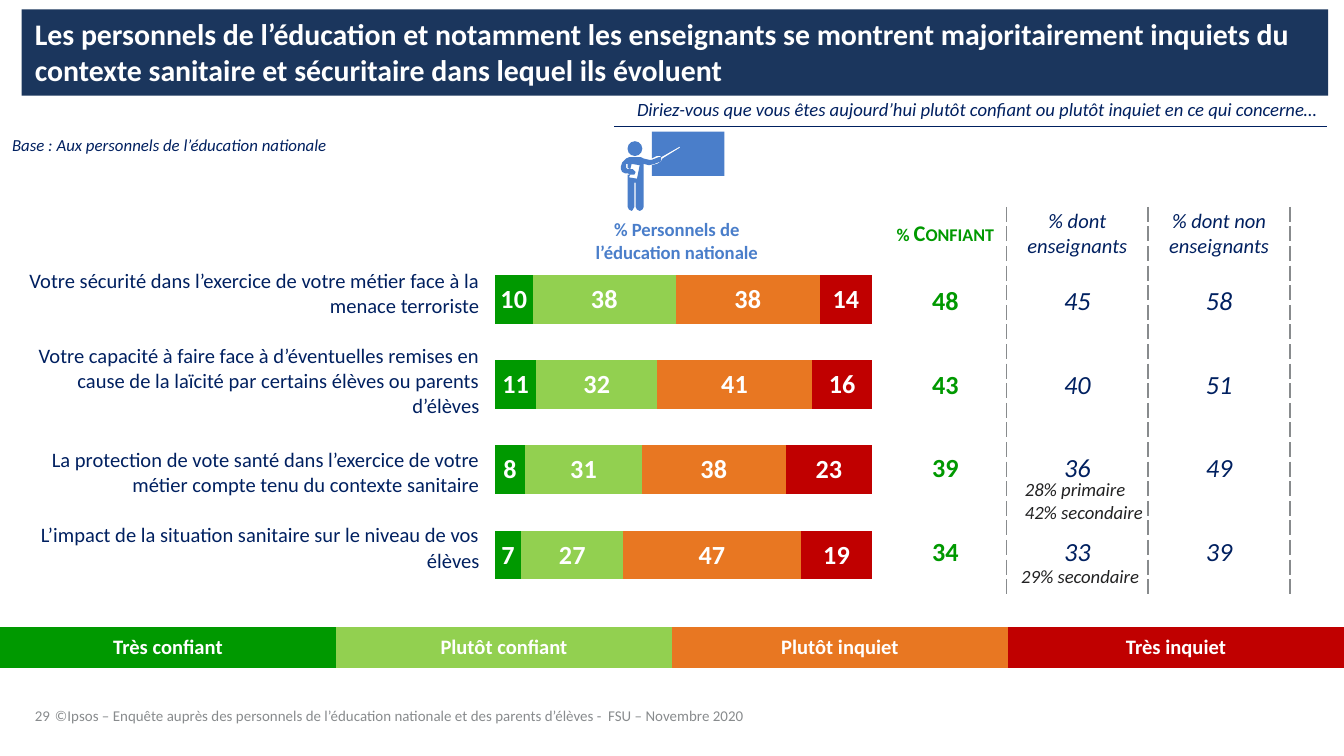
from dataclasses import dataclass

import lxml.etree
import pptx
import pptx.chart.data
import pptx.dml.color
import pptx.enum.chart
import pptx.enum.shapes
import pptx.enum.text
import pptx.oxml
import pptx.oxml.ns
import pptx.util

Cm = pptx.util.Cm
Align = pptx.enum.text.PP_ALIGN
Anchor = pptx.enum.text.MSO_ANCHOR
qn = pptx.oxml.ns.qn

FONT = "Calibri"
NAVY, WHITE, GREY, BLACK = "002060", "FFFFFF", "888B8D", "222223"
GREEN, BLUE, TITLE_FILL = "009900", "4A7ECA", "1B365D"
PLAIN_TABLE = "{2D5ABB26-0587-4C30-8999-92F81FD0307C}"
NO_INSETS = (0, 0, 0, 0)
BOX_INSETS = (0.25, 0.13, 0.25, 0.13)


@dataclass
class Answer:
    name: str
    color: str
    values: tuple[int, ...]


@dataclass
class Topic:
    label: str
    height: float
    teachers: int
    others: int


@dataclass
class Note:
    left: float
    top: float
    width: float
    height: float
    text: str
    size: float
    color: str
    italic: bool = False
    bold: bool = False
    align: Align = Align.LEFT
    anchor: Anchor = Anchor.TOP
    insets: tuple = BOX_INSETS


ANSWERS = [
    Answer("Très confiant", GREEN, (10, 11, 8, 7)),
    Answer("Plutôt confiant", "92D050", (38, 32, 31, 27)),
    Answer("Plutôt inquiet", "E87722", (38, 41, 38, 47)),
    Answer("Très inquiet", "C00000", (14, 16, 23, 19)),
]
TOPICS = [
    Topic("Votre sécurité dans l’exercice de votre métier face à la menace terroriste", 1.19, 45, 58),
    Topic("Votre capacité à faire face à d’éventuelles remises en cause de la laïcité "
          "par certains élèves ou parents d’élèves", 2.11, 40, 51),
    Topic("La protection de vote santé dans l’exercice de votre métier compte tenu "
          "du contexte sanitaire", 1.35, 36, 49),
    Topic("L’impact de la situation sanitaire sur le niveau de vos élèves", 1.5, 33, 39),
]
NOTES = [
    Note(0.66, 13.03, 0.86, 0.66, "29", 8, GREY, anchor=Anchor.BOTTOM, insets=NO_INSETS),
    Note(0.79, 13.23, 18.77, 0.51, "©Ipsos – Enquête auprès des personnels de l’éducation nationale "
         "et des parents d’élèves -  FSU – Novembre 2020", 8, GREY),
    Note(11.79, 1.45, 13.46, 1.24, "Diriez-vous que vous êtes aujourd’hui plutôt confiant ou plutôt "
         "inquiet en ce qui concerne…", 10, NAVY, italic=True, anchor=Anchor.MIDDLE),
    Note(0.23, 2.54, 6.07, 0.38, "Base : Aux personnels de l’éducation nationale", 9, NAVY,
         italic=True, insets=NO_INSETS),
    Note(10.87, 3.99, 3.84, 1.12, "% Personnels de l’éducation nationale", 10, BLUE,
         bold=True, align=Align.CENTER),
    Note(19.37, 9.04, 2.41, 0.86, "28% primaire\n42% secondaire", 10, BLACK, italic=True, insets=NO_INSETS),
    Note(19.3, 10.67, 2.41, 0.43, "29% secondaire", 10, BLACK, italic=True, insets=NO_INSETS),
]
BOARD = [(491, 116), (492, 117), (506, 109), (506.3, 109.5), (493, 117.6), (492, 120), (489, 122),
         (485, 123), (485, 131), (539, 131), (539, 98), (485, 98), (485, 118), (489, 116)]
BODY = [(465, 129), (467, 129), (469, 130), (472, 130), (473, 128), (471, 126), (467, 126),
        (466, 125), (466, 122), (467, 122), (467, 125), (469, 126), (470, 122), (476, 123),
        (474, 133), (468, 132), (469, 130), (467, 130), (467, 154), (468, 156), (469.5, 157),
        (471, 156), (472, 154), (472, 136), (473, 136), (473, 154), (474, 156), (476, 157),
        (478, 156), (479, 154), (479, 122), (483, 123), (487, 122), (492, 120), (492.5, 118),
        (492, 117), (490, 117), (485, 119), (483, 119), (479, 118), (477, 117), (468, 117),
        (466, 118), (463, 121), (462, 124), (462, 126), (463, 128)]


def rgb(color: str) -> pptx.dml.color.RGBColor:
    return pptx.dml.color.RGBColor.from_string(color)


def style_font(font, *, size: float, color: str, bold: bool = False, italic: bool = False) -> None:
    font.name, font.size = FONT, pptx.util.Pt(size)
    font.bold, font.italic = bold, italic
    font.color.rgb = rgb(color)


def write(frame, text: str, *, align: Align = Align.LEFT, small_caps: bool = False, **font_format) -> None:
    for index, line in enumerate(text.split("\n")):
        para = frame.add_paragraph() if index else frame.paragraphs[0]
        para.alignment = align
        span = para.add_run()
        span.text = line
        style_font(span.font, **font_format)
        if small_caps:
            span.font._element.set("cap", "small")


def set_insets(target, insets: tuple) -> None:
    target.margin_left, target.margin_top, target.margin_right, target.margin_bottom = map(Cm, insets)


def paint(shape, color: str) -> None:
    shape.shadow.inherit = False
    shape.fill.solid()
    shape.fill.fore_color.rgb = rgb(color)
    shape.line.fill.background()


def add_note(page, note: Note) -> None:
    box = page.shapes.add_textbox(Cm(note.left), Cm(note.top), Cm(note.width), Cm(note.height))
    frame = box.text_frame
    frame.word_wrap = True
    frame.vertical_anchor = note.anchor
    set_insets(frame, note.insets)
    write(frame, note.text, size=note.size, color=note.color, bold=note.bold,
          italic=note.italic, align=note.align)


def add_grid(page, left: float, top: float, widths: list[float], heights: list[float]):
    table = page.shapes.add_table(len(heights), len(widths), Cm(left), Cm(top),
                                  Cm(sum(widths)), Cm(sum(heights))).table
    table.first_row = table.horz_banding = False
    table._tbl.tblPr.find(qn("a:tableStyleId")).text = PLAIN_TABLE
    for column, width in zip(table.columns, widths):
        column.width = Cm(width)
    for row, height in zip(table.rows, heights):
        row.height = Cm(height)
    return table


def fill_cell(cell, text: str, *, fill: str, insets: tuple = BOX_INSETS, **text_format) -> None:
    cell.fill.solid()
    cell.fill.fore_color.rgb = rgb(fill)
    cell.vertical_anchor = Anchor.MIDDLE
    set_insets(cell, insets)
    write(cell.text_frame, text, **text_format)


def dash_right_side(cell) -> None:
    border = lxml.etree.Element(qn("a:lnR"), w="12700")
    fill = lxml.etree.SubElement(border, qn("a:solidFill"))
    lxml.etree.SubElement(fill, qn("a:srgbClr"), val=GREY)
    lxml.etree.SubElement(border, qn("a:prstDash"), val="sysDash")
    cell._tc.get_or_add_tcPr().insert(0, border)


def add_answer_chart(page) -> None:
    data = pptx.chart.data.CategoryChartData(number_format="0")
    data.categories = [str(number + 1) for number in range(len(TOPICS))]
    for answer in ANSWERS:
        data.add_series(answer.name, answer.values)
    chart = page.shapes.add_chart(pptx.enum.chart.XL_CHART_TYPE.BAR_STACKED_100,
                                  Cm(6.58), Cm(4.85), Cm(9.91), Cm(6.45), data).chart
    chart.has_legend = chart.has_title = False
    style_font(chart.font, size=10, color=BLACK)
    chart.category_axis.reverse_order = True
    chart.category_axis.visible = chart.value_axis.visible = False
    chart.value_axis.has_major_gridlines = False
    chart.value_axis.minimum_scale, chart.value_axis.maximum_scale = 0, 1
    plot = chart.plots[0]
    plot.gap_width, plot.overlap, plot.vary_by_categories = 75, 100, False
    for series, answer in zip(plot.series, ANSWERS):
        series.format.fill.solid()
        series.format.fill.fore_color.rgb = rgb(answer.color)
        series.data_labels.show_value = True
        style_font(series.data_labels.font, size=14, color=WHITE, bold=True)
    area = chart._chartSpace.chart.plotArea
    for old in area.findall(qn("c:layout")):
        area.remove(old)
    layout = lxml.etree.Element(qn("c:layout"))
    manual = lxml.etree.SubElement(layout, qn("c:manualLayout"))
    for tag, value in (("layoutTarget", "inner"), ("xMode", "edge"), ("yMode", "edge"),
                       ("x", "0.28"), ("y", "0"), ("w", "0.72"), ("h", "1")):
        lxml.etree.SubElement(manual, qn(f"c:{tag}"), val=value)
    area.insert(0, layout)


def add_title(page) -> None:
    bar = page.shapes.add_shape(pptx.enum.shapes.MSO_SHAPE.RECTANGLE, Cm(0.41), Cm(0.18), Cm(24.69), Cm(1.63))
    paint(bar, TITLE_FILL)
    bar.text_frame.word_wrap = True
    bar.text_frame.vertical_anchor = Anchor.TOP
    write(bar.text_frame, "Les personnels de l’éducation et notamment les enseignants se montrent "
          "majoritairement inquiets du contexte sanitaire et sécuritaire dans lequel ils évoluent",
          size=16, color=WHITE, bold=True)
    rule = page.shapes.add_connector(pptx.enum.shapes.MSO_CONNECTOR.STRAIGHT, Cm(11.61), Cm(2.39), Cm(25.07), Cm(2.39))
    rule.line.color.rgb, rule.line.width = rgb(NAVY), pptx.util.Pt(0.5)
    lxml.etree.SubElement(rule._element.spPr, qn("a:effectLst"))


def add_teacher(page) -> None:
    teacher = page.shapes.add_group_shape()
    for outline in (BOARD, BODY):
        builder = teacher.shapes.build_freeform(*outline[0], scale=Cm(0.0254))
        builder.add_line_segments(outline[1:], close=True)
        paint(builder.convert_to_shape(), BLUE)
    paint(teacher.shapes.add_shape(pptx.enum.shapes.MSO_SHAPE.OVAL, Cm(11.86), Cm(2.67), Cm(0.28), Cm(0.28)), BLUE)


def add_tables(page) -> None:
    legend = add_grid(page, 0, 11.86, [6.35] * len(ANSWERS), [0.76])
    for cell, answer in zip(legend.rows[0].cells, ANSWERS):
        fill_cell(cell, answer.name, fill=answer.color, size=11, color=WHITE, bold=True, align=Align.CENTER)

    labels = add_grid(page, 0.23, 4.95, [8.86], [topic.height for topic in TOPICS])
    for row, topic in enumerate(TOPICS):
        fill_cell(labels.cell(row, 0), topic.label, fill=WHITE, insets=(0.03, 0.03, 0.03, 0),
                  size=11, color=NAVY, align=Align.RIGHT)

    confident = [sum(pair) for pair in zip(ANSWERS[0].values, ANSWERS[1].values)]
    rows = [("% Confiant", "% dont enseignants", "% dont non enseignants")]
    rows += [(total, topic.teachers, topic.others) for total, topic in zip(confident, TOPICS)]
    scores = add_grid(page, 16.71, 3.91, [2.31, 2.68, 2.68], [0.99] + [1.58] * len(TOPICS))
    for row, values in enumerate(rows):
        for column, value in enumerate(values):
            total = column == 0
            header_size = 12 if total else 11
            fill_cell(scores.cell(row, column), str(value), fill=WHITE, insets=(0, 0.03, 0, 0),
                      size=14 if row else header_size, color=GREEN if total else NAVY, bold=total,
                      italic=not total, small_caps=total and row == 0, align=Align.CENTER)
            dash_right_side(scores.cell(row, column))


def main() -> None:
    deck = pptx.Presentation()
    deck.slide_width, deck.slide_height = Cm(25.4), Cm(14.29)
    page = deck.slides.add_slide(deck.slide_layouts[6])
    add_answer_chart(page)
    add_title(page)
    add_tables(page)
    add_teacher(page)
    for note in NOTES:
        add_note(page, note)
    deck.save("out.pptx")


if __name__ == "__main__":
    main()
